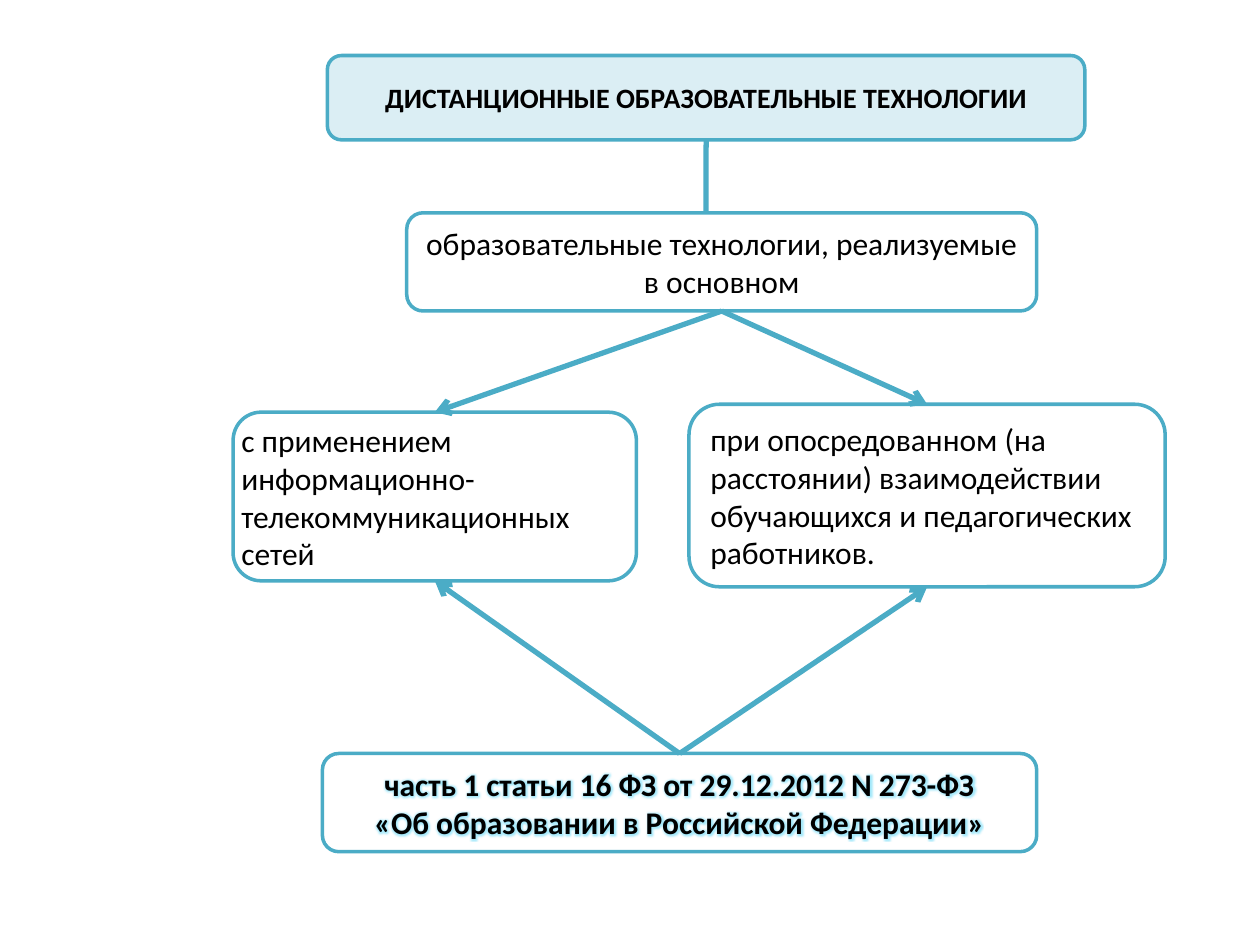
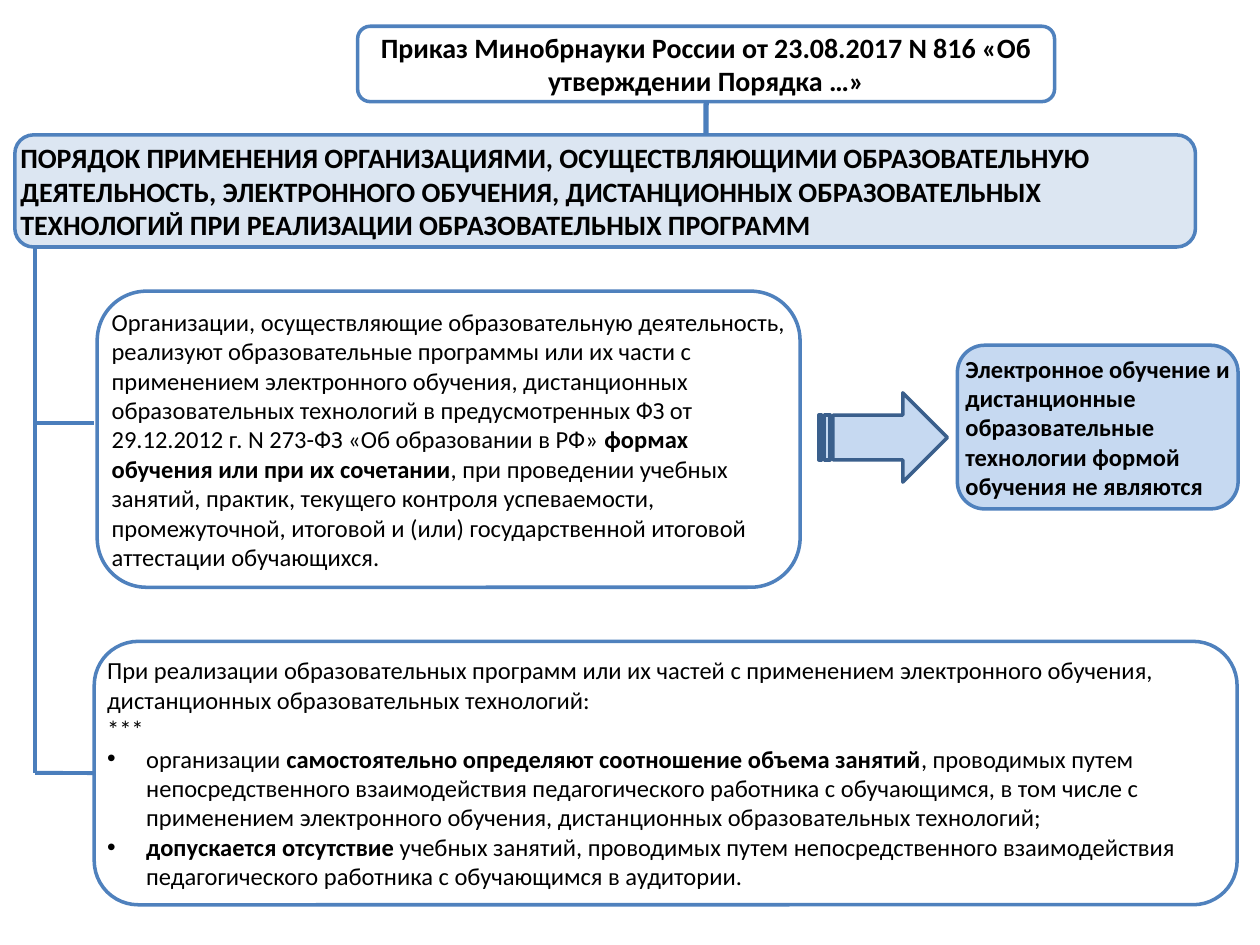
from lxml.etree import SubElement, fromstring
from pptx import Presentation
from pptx.dml.color import RGBColor
from pptx.enum.shapes import MSO_CONNECTOR, MSO_SHAPE
from pptx.enum.text import MSO_ANCHOR, MSO_AUTO_SIZE, PP_ALIGN
from pptx.oxml.ns import nsdecls, qn
from pptx.util import Cm, Pt

COLORS = {
    "text": "000000",
    "white": "FFFFFF",
    "teal": "4BACC6",
    "pale_teal": "DBEEF4",
    "blue": "4F81BD",
    "pale_blue": "DCE6F2",
    "light_blue": "C6D9F1",
    "branch": "4B7EBC",
    "arrow_edge": "3A5F8C",
}
FONT = "Calibri"
TOP, LEFT, BOTTOM = 0, 1, 2


def rgb(name):
    return RGBColor.from_string(COLORS[name])


def set_all(obj, values):
    for name, value in values.items():
        setattr(obj, name, value)


def offset(box, dx, dy, w, h):
    """Box in cm, placed relative to the corner of an outer box."""
    return box[0] + dx, box[1] + dy, w, h


def add_bullet(p):
    pPr = p._p.get_or_add_pPr()
    pPr.set("marL", str(Cm(0.79)))
    pPr.set("indent", str(-Cm(0.79)))
    SubElement(pPr, qn("a:buFont")).set("typeface", "Arial")
    SubElement(pPr, qn("a:buChar")).set("char", "•")


def add_glow(r):
    glow = fromstring(
        f'<a:effectLst {nsdecls("a")}><a:glow rad="63500">'
        f'<a:srgbClr val="{COLORS["teal"]}"><a:satMod val="175000"/>'
        '<a:alpha val="40000"/></a:srgbClr></a:glow></a:effectLst>')
    r.font._element.find(qn("a:solidFill")).addnext(glow)


def write(sp, paragraphs, size, bold=False, align=PP_ALIGN.LEFT, inset=(0, 0), glow=False):
    """Fill a shape with text; |bars| enclose bold words, a leading • makes a bullet."""
    tf = sp.text_frame
    x, y = (Cm(side) for side in inset)
    set_all(tf, {
        "word_wrap": True, "auto_size": MSO_AUTO_SIZE.NONE,
        "vertical_anchor": MSO_ANCHOR.MIDDLE,
        "margin_left": x, "margin_right": x, "margin_top": y, "margin_bottom": y,
    })
    for i, text in enumerate(paragraphs):
        p = tf.add_paragraph() if i else tf.paragraphs[0]
        p.alignment = align
        if text.startswith("•"):
            add_bullet(p)
        for j, part in enumerate(text.lstrip("•").split("|")):
            if not part:
                continue
            r = p.add_run()
            r.text = part
            set_all(r.font, {"name": FONT, "size": Pt(size), "bold": bold or j % 2 == 1})
            r.font.color.rgb = rgb("text")
            if glow:
                add_glow(r)


def add_block(slide, box, fill, line, kind=MSO_SHAPE.ROUNDED_RECTANGLE):
    sp = slide.shapes.add_shape(kind, *(Cm(v) for v in box))
    sp.shadow.inherit = False
    sp.fill.solid()
    sp.fill.fore_color.rgb = rgb(fill)
    sp.line.color.rgb = rgb(line)
    sp.line.width = Pt(2)
    return sp


def text_block(slide, box, line, paragraphs, size, fill="white", **style):
    sp = add_block(slide, box, fill, line)
    write(sp, paragraphs, size, **style)
    return sp


def title_block(slide, box, line, text, fill="white"):
    """Rounded frame with the slide title lying on it."""
    frame = add_block(slide, box, fill, line)
    title = slide.shapes.title
    set_all(title, dict(zip(("left", "top", "width", "height"), (Cm(v) for v in box))))
    write(title, [text], 16, bold=True, align=PP_ALIGN.CENTER, inset=(0.08, 0))
    frame._element.addnext(title._element)
    return frame


def add_line(slide, color, width, start, end, arrow=False):
    """Each end is a point in cm or a pair of shape and side number."""
    points = [(0, 0) if hasattr(a, "shape_type") else (a, b) for a, b in (start, end)]
    c = slide.shapes.add_connector(
        MSO_CONNECTOR.STRAIGHT, *(Cm(v) for point in points for v in point))
    for (target, side), join in ((start, c.begin_connect), (end, c.end_connect)):
        if hasattr(target, "shape_type"):
            join(target, side)
    c.line.color.rgb = rgb(color)
    c.line.width = Pt(width)
    if arrow:
        SubElement(c.line._get_or_add_ln(), qn("a:tailEnd")).set("type", "arrow")
    SubElement(c._element.spPr, qn("a:effectLst"))
    return c


def definition_diagram(slide, box):
    centered = {"align": PP_ALIGN.CENTER, "inset": (0.25, 0.13)}
    definition = text_block(
        slide, offset(box, 3.5, 0, 12.7, 1.98), "teal",
        ["образовательные технологии, реализуемые в основном"], 18, **centered)
    networks = text_block(
        slide, offset(box, 0, 4.02, 8.13, 3.4), "teal",
        ["с применением", "информационно-телекоммуникационных сетей"], 18)
    distance = text_block(
        slide, offset(box, 9.19, 3.86, 9.6, 3.68), "teal",
        ["при опосредованном (на расстоянии) взаимодействии обучающихся "
         "и педагогических работников."], 18, inset=(0.25, 0.13))
    law = text_block(
        slide, offset(box, 1.8, 10.9, 14.4, 1.98), "teal",
        ["часть 1 статьи 16 ФЗ от 29.12.2012 N 273-ФЗ",
         "«Об образовании в Российской Федерации»"], 18, bold=True, glow=True, **centered)
    for source, source_side, target_side in ((definition, BOTTOM, TOP), (law, TOP, BOTTOM)):
        for target in (networks, distance):
            add_line(slide, "teal", 3, (source, source_side), (target, target_side), arrow=True)


def conclusion(slide, box):
    add_block(slide, offset(box, 0, 0.96, 2.59, 1.8), "light_blue", "arrow_edge",
              MSO_SHAPE.STRIPED_RIGHT_ARROW)
    text_block(slide, offset(box, 2.79, 0, 5.66, 3.3), "blue",
               ["Электронное обучение и дистанционные образовательные технологии "
                "формой обучения не являются"], 14, fill="light_blue", bold=True)


def order_tree(slide, box):
    left, top = box[:2]
    text_block(
        slide, offset(box, 0, 0, 23.8, 2.26), "blue",
        ["ПОРЯДОК ПРИМЕНЕНИЯ ОРГАНИЗАЦИЯМИ, ОСУЩЕСТВЛЯЮЩИМИ ОБРАЗОВАТЕЛЬНУЮ "
         "ДЕЯТЕЛЬНОСТЬ, ЭЛЕКТРОННОГО ОБУЧЕНИЯ, ДИСТАНЦИОННЫХ ОБРАЗОВАТЕЛЬНЫХ "
         "ТЕХНОЛОГИЙ ПРИ РЕАЛИЗАЦИИ ОБРАЗОВАТЕЛЬНЫХ ПРОГРАММ"],
        16, fill="pale_blue", bold=True)
    text_block(
        slide, offset(box, 1.66, 3.15, 14.17, 5.97), "blue",
        ["Организации, осуществляющие образовательную деятельность, реализуют "
         "образовательные программы или их части с применением электронного обучения, "
         "дистанционных образовательных технологий в предусмотренных ФЗ от "
         "29.12.2012 г. N 273-ФЗ «Об образовании в РФ» "
         "|формах обучения или при их сочетании|, при проведении учебных занятий, "
         "практик, текущего контроля успеваемости, промежуточной, итоговой и (или) "
         "государственной итоговой аттестации обучающихся."], 14)
    conditions = text_block(
        slide, offset(box, 1.6, 10.21, 23.04, 5.31), "blue",
        ["При реализации образовательных программ или их частей с применением "
         "электронного обучения, дистанционных образовательных технологий:",
         "***",
         "•организации |самостоятельно определяют соотношение объема занятий|, "
         "проводимых путем непосредственного взаимодействия педагогического работника "
         "с обучающимся, в том числе с применением электронного обучения, "
         "дистанционных образовательных технологий;",
         "•|допускается отсутствие |учебных занятий, проводимых путем непосредственного "
         "взаимодействия педагогического работника с обучающимся в аудитории."], 14)
    trunk_x, upper_y, lower_y = left + 0.41, top + 5.81, top + 12.86
    add_line(slide, "branch", 2.25, (trunk_x, top + 2.28), (trunk_x, lower_y))
    add_line(slide, "branch", 2.25, (trunk_x, upper_y), (left + 1.6, upper_y))
    add_line(slide, "branch", 2.25, (trunk_x, lower_y), (conditions, LEFT))


def technologies_slide(slide):
    head = title_block(slide, (6.6, 1.12, 15.27, 1.7), "teal",
                       "ДИСТАНЦИОННЫЕ ОБРАЗОВАТЕЛЬНЫЕ ТЕХНОЛОГИИ", fill="pale_teal")
    definition_diagram(slide, (4.7, 4.29, 18.79, 12.88))
    add_line(slide, "teal", 3, (head, BOTTOM), (14.23, 4.29))


def order_slide(slide):
    head = title_block(slide, (7.21, 0.53, 14.05, 1.52), "blue",
                       "Приказ Минобрнауки России от 23.08.2017 N 816 "
                       "«Об утверждении Порядка …»")
    order_tree(slide, (0.3, 2.72, 24.64, 15.52))
    add_line(slide, "branch", 3, (head, BOTTOM), (14.23, 2.72))
    conclusion(slide, (16.51, 6.96, 8.45, 3.3))


def main():
    prs = Presentation()
    set_all(prs, {"slide_width": Cm(25.4), "slide_height": Cm(19.05)})
    title_only = prs.slide_layouts[5]
    for build in (technologies_slide, order_slide):
        build(prs.slides.add_slide(title_only))
    prs.save("out.pptx")


if __name__ == "__main__":
    main()
